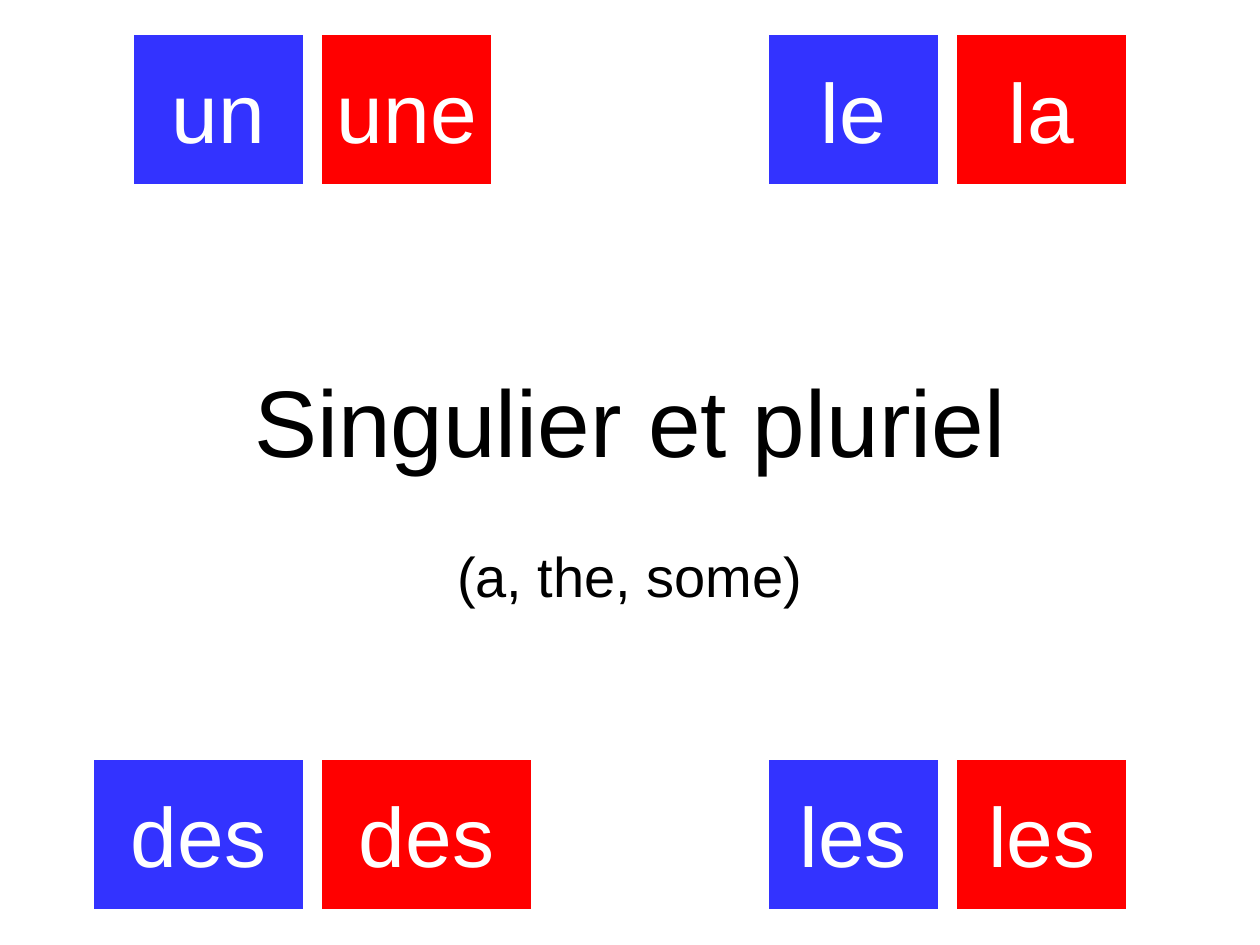
import pptx
import pptx.util
import pptx.dml.color
import pptx.enum.shapes
import pptx.enum.text

Cm = pptx.util.Cm
Pt = pptx.util.Pt
RGB = pptx.dml.color.RGBColor

BLUE = RGB(0x33, 0x33, 0xFF)
RED = RGB(0xFF, 0, 0)
WHITE = RGB(0xFF, 0xFF, 0xFF)
BLACK = RGB(0, 0, 0)

TOP, BOTTOM = 0.71, 15.32
LEFT, RIGHT = 6.3, 19.1
HEIGHT, GAP = 3, 0.4

PAIRS = [
    (("un", "une"), LEFT, TOP, 3.4),
    (("le", "la"), RIGHT, TOP, 3.4),
    (("des", "des"), LEFT, BOTTOM, 4.2),
    (("les", "les"), RIGHT, BOTTOM, 3.4),
]
HEADINGS = [
    ("(a, the, some)", (3.81, 10.8, 17.78, 4.88), 32, 2),
    ("Singulier et pluriel", (4.3, 7.19, 16.8, 2.54), 54, 4),
]


def write(sp, text, size, color, anchor, wrap=True, before=0):
    tf = sp.text_frame
    tf.word_wrap = wrap
    tf.vertical_anchor = anchor
    p = tf.paragraphs[0]
    p.alignment = pptx.enum.text.PP_ALIGN.CENTER
    p.space_before = Pt(before)
    r = p.add_run()
    r.text = text
    r.font.name = "Arial"
    r.font.size = Pt(size)
    r.font.color.rgb = color


prs = pptx.Presentation()
prs.slide_width, prs.slide_height = Cm(25.4), Cm(19.05)
s = prs.slides.add_slide(prs.slide_layouts[6])

for words, center, top, width in PAIRS:
    lefts = (center - GAP / 2 - width, center + GAP / 2)
    for word, left, color in zip(words, lefts, (BLUE, RED)):
        sp = s.shapes.add_shape(
            pptx.enum.shapes.MSO_SHAPE.ACTION_BUTTON_CUSTOM,
            Cm(left), Cm(top), Cm(width), Cm(HEIGHT))
        sp.shadow.inherit = False
        sp.fill.solid()
        sp.fill.fore_color.rgb = color
        sp.line.fill.background()
        write(sp, word, 48, WHITE, pptx.enum.text.MSO_ANCHOR.MIDDLE, wrap=False)

for text, box, size, before in HEADINGS:
    sp = s.shapes.add_textbox(*map(Cm, box))
    write(sp, text, size, BLACK, pptx.enum.text.MSO_ANCHOR.TOP, before=before)

prs.save("out.pptx")
